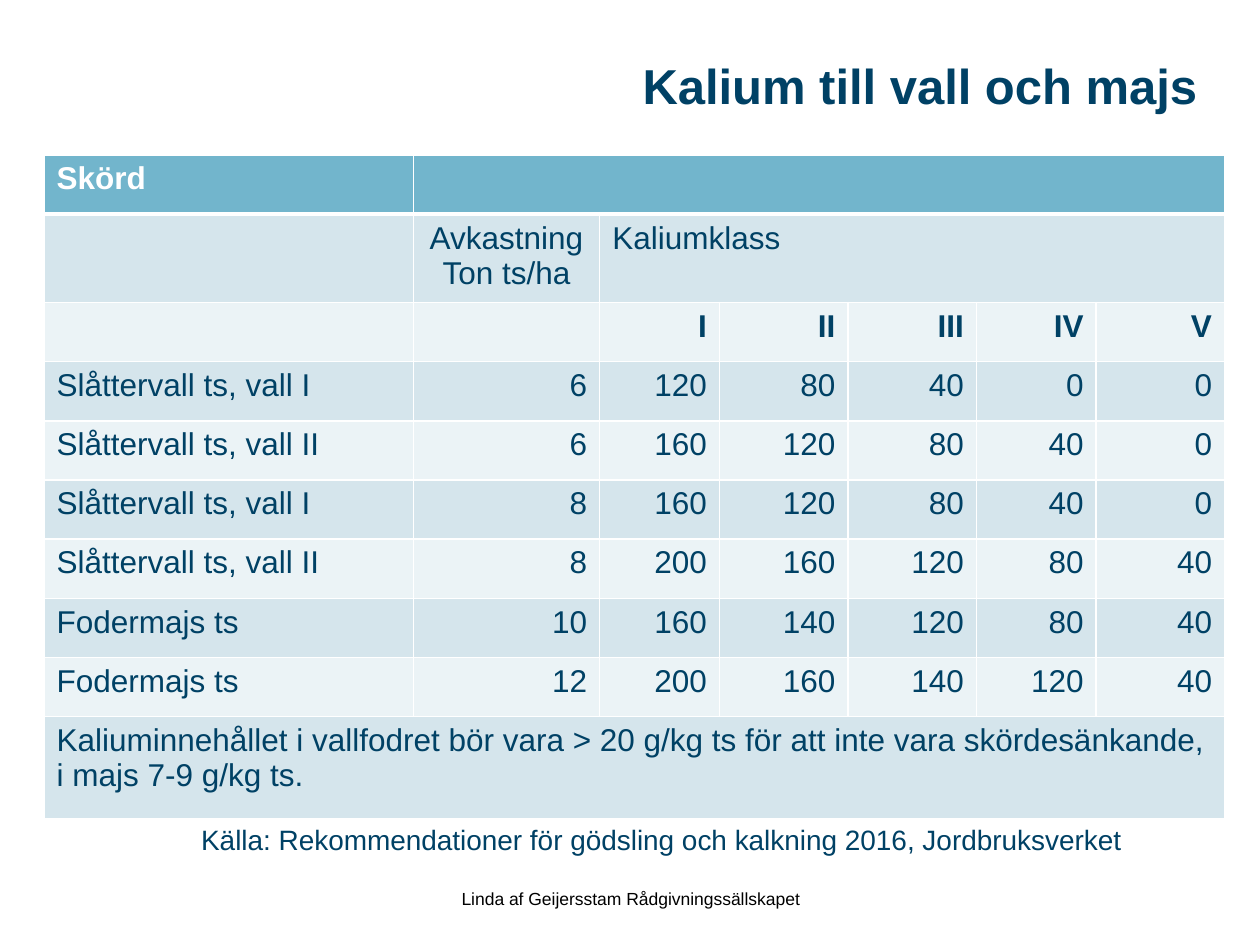
from lxml import etree
from pptx import Presentation
from pptx import util as u
from pptx.dml.color import RGBColor
from pptx.enum import text
from pptx.oxml import ns

COLORS = {"navy": "004165", "header": "72B5CC", "dark_band": "D5E5EC",
          "light_band": "EBF3F6", "white": "FFFFFF", "black": "000000"}
FONT = "Arial"
LEFT, CENTER, RIGHT = text.PP_ALIGN.LEFT, text.PP_ALIGN.CENTER, text.PP_ALIGN.RIGHT

COLUMN_WIDTHS = [2.93, 1.48, 0.95, 1.02, 1.02, 0.95, 1.02]
ROW_HEIGHTS = [0.47, 0.7] + [0.47] * 7 + [0.81]
ROWS = [
    ["Skörd"],
    ["", "Avkastning\nTon ts/ha", "Kaliumklass"],
    ["", "", "I", "II", "III", "IV", "V"],
    ["Slåttervall ts, vall I", "6", "120", "80", "40", "0", "0"],
    ["Slåttervall ts, vall II", "6", "160", "120", "80", "40", "0"],
    ["Slåttervall ts, vall I", "8", "160", "120", "80", "40", "0"],
    ["Slåttervall ts, vall II", "8", "200", "160", "120", "80", "40"],
    ["Fodermajs ts", "10", "160", "140", "120", "80", "40"],
    ["Fodermajs ts", "12", "200", "160", "140", "120", "40"],
    ["Kaliuminnehållet i vallfodret bör vara > 20 g/kg ts för att inte vara "
     "skördesänkande, i majs 7-9 g/kg ts."],
]
MERGES = {0: 1, 1: 2, 9: 0}
CLASS_ROW = 2


def color(name):
    """Return the named colour."""
    return RGBColor.from_string(COLORS[name])


def write(frame, content, size, color_name, align, bold=False):
    """Write each line of content as a one-run paragraph."""
    for index, line in enumerate(content.split("\n")):
        paragraph = frame.paragraphs[0] if index == 0 else frame.add_paragraph()
        paragraph.alignment = align
        run = paragraph.add_run()
        run.text = line
        run.font.name = FONT
        run.font.size = u.Pt(size)
        run.font.bold = bold
        run.font.color.rgb = color(color_name)


def add_label(slide, box, content, size, color_name, align, anchor, bold=False):
    """Place one line of text in a box."""
    frame = slide.shapes.add_textbox(*map(u.Inches, box)).text_frame
    frame.word_wrap = True
    frame.vertical_anchor = anchor
    write(frame, content, size, color_name, align, bold)


def set_borders(cell, widths):
    """Draw white cell borders with the given widths in points."""
    properties = cell._tc.get_or_add_tcPr()
    for side, width in widths.items():
        line = etree.SubElement(properties, ns.qn(f"a:ln{side}"), w=str(u.Pt(width)))
        fill = etree.SubElement(line, ns.qn("a:solidFill"))
        etree.SubElement(fill, ns.qn("a:srgbClr"), val=COLORS["white"])


def cell_align(row, column):
    """Return the alignment for a cell position."""
    if row == 1 and column == 1:
        return CENTER
    return RIGHT if row >= CLASS_ROW and column > 0 else LEFT


def add_potassium_table(slide, box):
    """Build the table of potassium rates by crop and class."""
    table = slide.shapes.add_table(
        len(ROWS), len(COLUMN_WIDTHS), *map(u.Inches, box)).table
    for column, width in zip(table.columns, COLUMN_WIDTHS):
        column.width = u.Inches(width)
    for row, height in zip(table.rows, ROW_HEIGHTS):
        row.height = u.Inches(height)
    for row, values in enumerate(ROWS):
        band = "header" if row == 0 else "dark_band" if row % 2 else "light_band"
        for column in range(len(COLUMN_WIDTHS)):
            cell = table.cell(row, column)
            set_borders(cell, {"L": 1, "R": 1, "T": 3 if row == 1 else 1,
                               "B": 3 if row == 0 else 1})
            cell.fill.solid()
            cell.fill.fore_color.rgb = color(band)
            if column < len(values) and values[column]:
                write(cell.text_frame, values[column], 18,
                      "white" if row == 0 else "navy",
                      cell_align(row, column), row in (0, CLASS_ROW))
    for row, first in MERGES.items():
        table.cell(row, first).merge(table.cell(row, len(COLUMN_WIDTHS) - 1))


def main():
    """Build and save the slide."""
    presentation = Presentation()
    presentation.slide_width, presentation.slide_height = u.Inches(10), u.Inches(7.5)
    slide = presentation.slides.add_slide(presentation.slide_layouts[6])
    middle, top = text.MSO_ANCHOR.MIDDLE, text.MSO_ANCHOR.TOP
    add_label(slide, (0.6, 0.36, 9, 0.63), "Kalium till vall och majs",
              28, "navy", RIGHT, middle, True)
    add_potassium_table(slide, (0.35, 1.23, 9.37, 5.27))
    add_label(slide, (0.75, 6.35, 9, 0.63),
              "Källa: Rekommendationer för gödsling och kalkning 2016, Jordbruksverket",
              16, "navy", CENTER, middle)
    add_label(slide, (3.42, 7, 3.17, 0.33),
              "Linda af Geijersstam Rådgivningssällskapet", 10, "black", CENTER, top)
    presentation.save("out.pptx")


if __name__ == "__main__":
    main()
